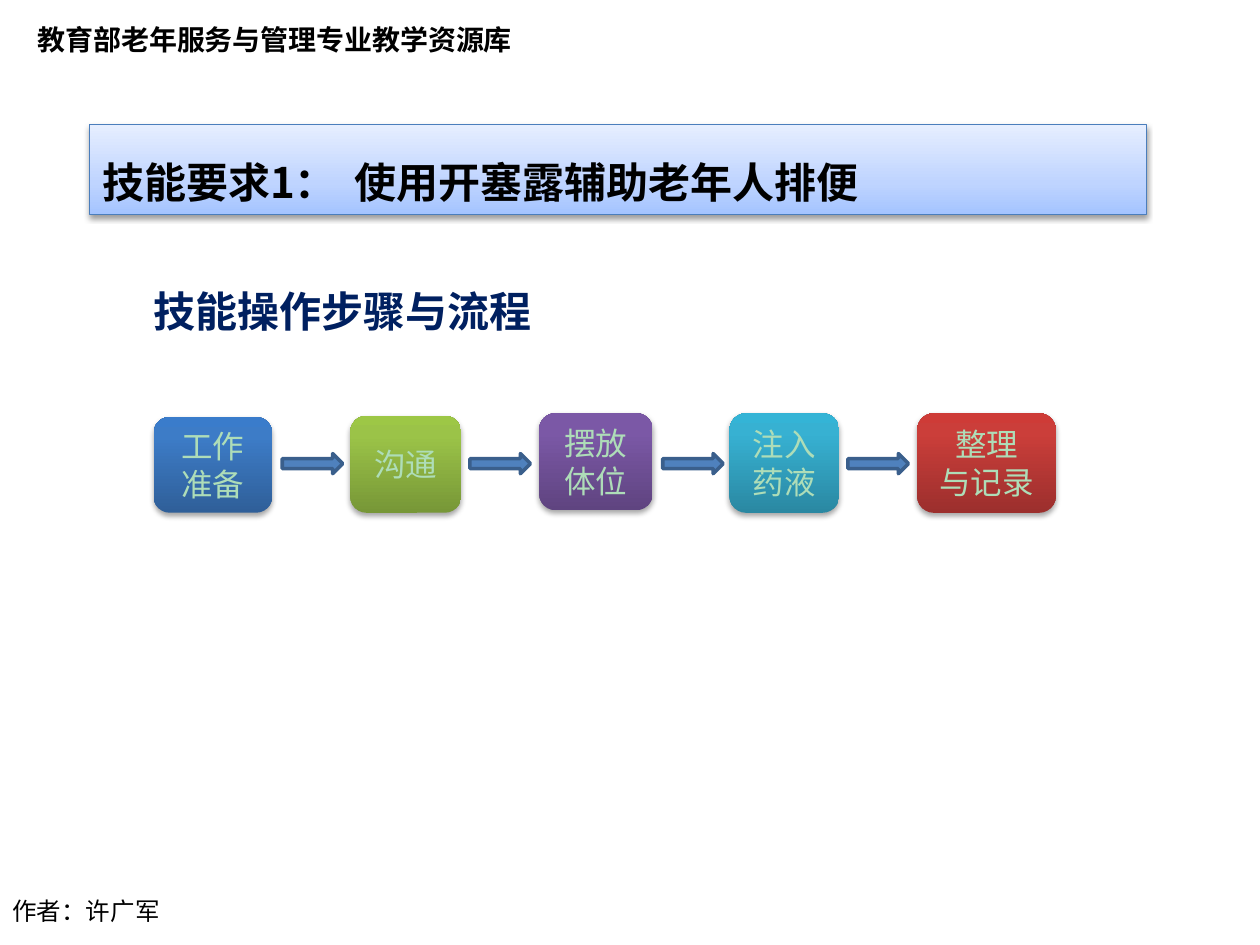
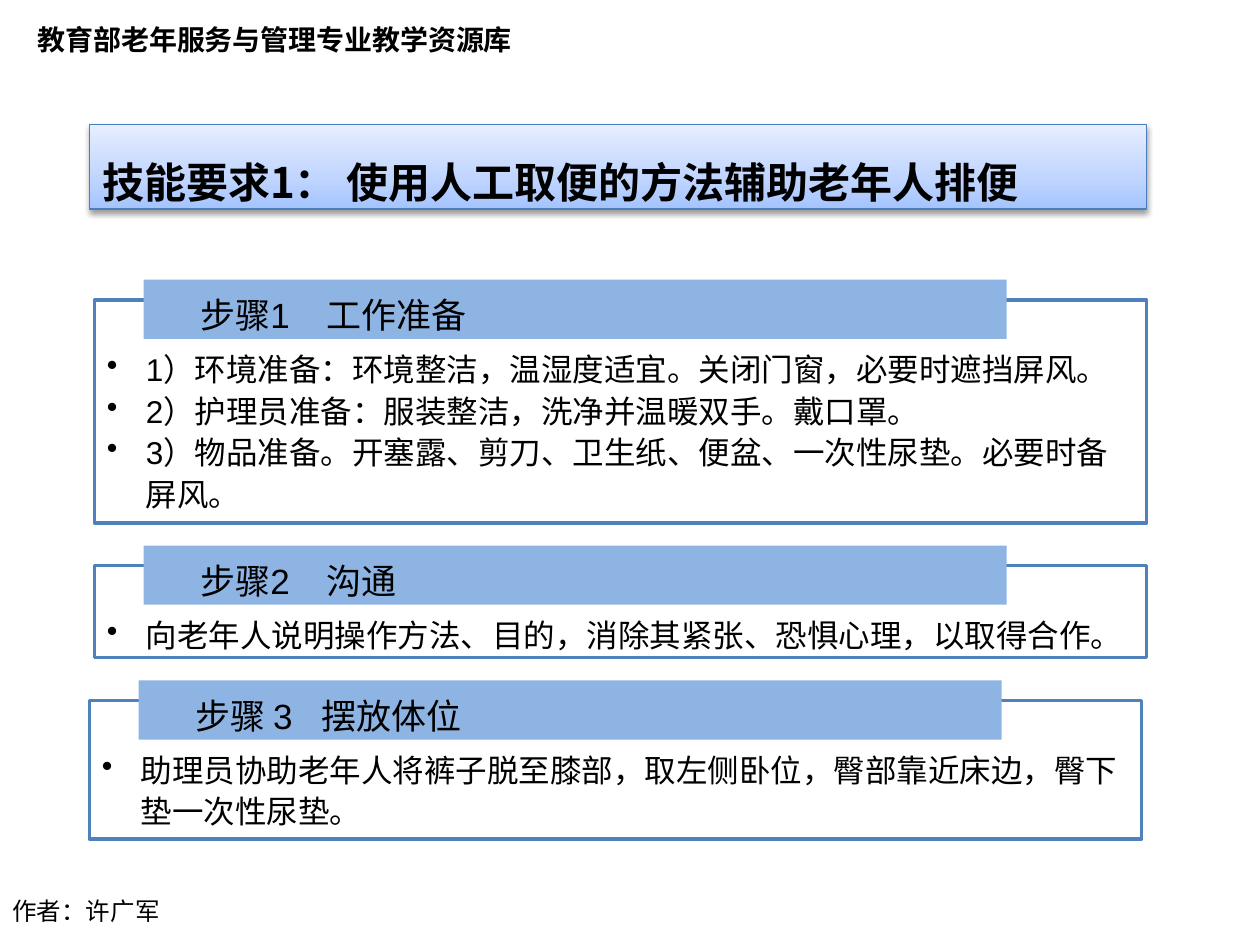
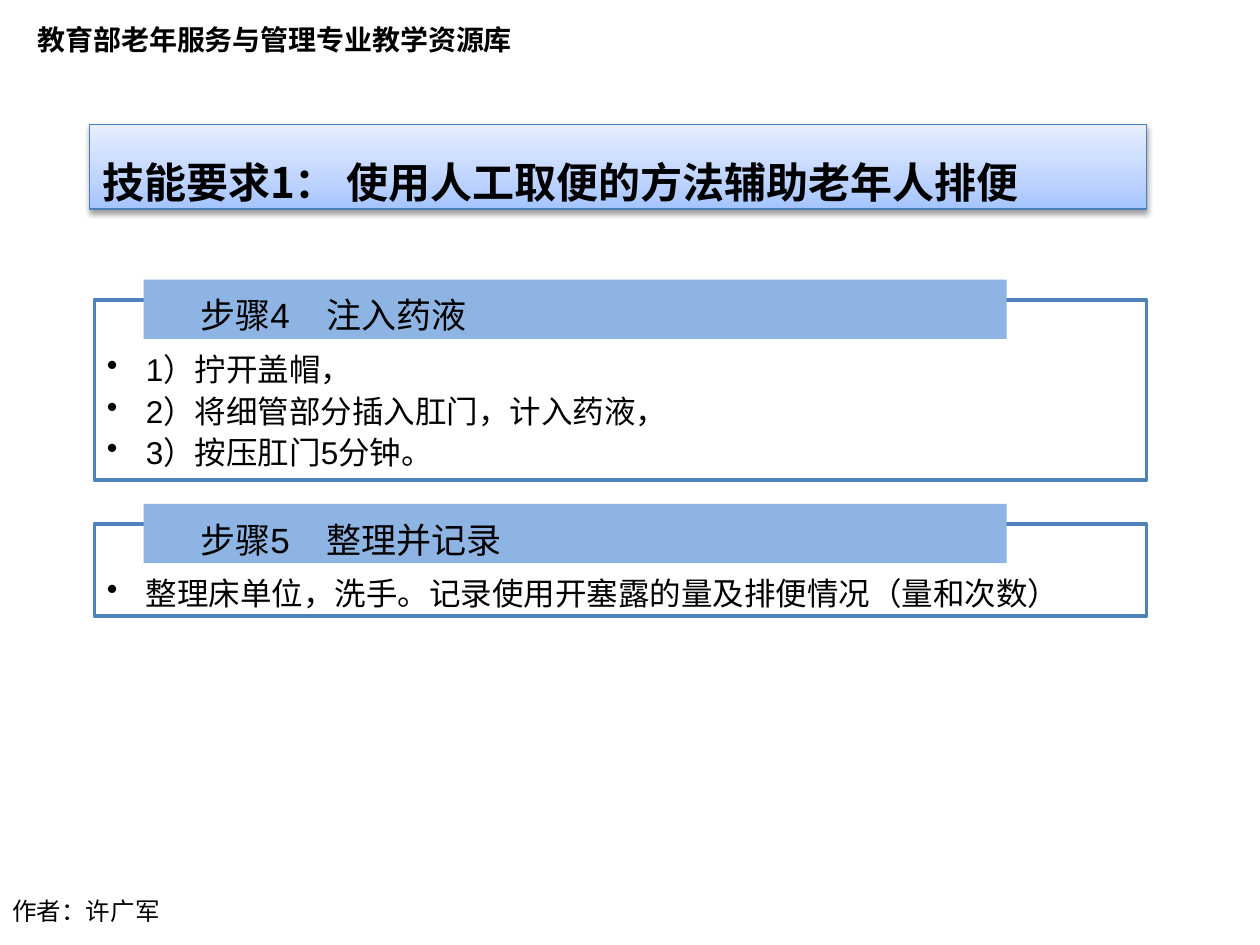
from copy import deepcopy

from pptx import Presentation
from pptx.dml.color import RGBColor
from pptx.enum.shapes import MSO_SHAPE
from pptx.enum.text import MSO_ANCHOR, MSO_AUTO_SIZE, PP_ALIGN
from pptx.oxml.ns import qn
from pptx.oxml.xmlchemy import OxmlElement
from pptx.util import Inches, Pt

RECTANGLE = MSO_SHAPE.RECTANGLE
ROUNDED = MSO_SHAPE.ROUNDED_RECTANGLE
ARROW = MSO_SHAPE.RIGHT_ARROW
TOP, MIDDLE = MSO_ANCHOR.TOP, MSO_ANCHOR.MIDDLE
LEFT, CENTER = PP_ALIGN.LEFT, PP_ALIGN.CENTER
FIXED = MSO_AUTO_SIZE.NONE

BLACK = RGBColor(0x00, 0x00, 0x00)
NAVY = RGBColor(0x00, 0x20, 0x60)
MINT = RGBColor(0xAE, 0xDD, 0xB8)
BLUE = RGBColor(0x4F, 0x81, 0xBD)
ARROW_EDGE = RGBColor(0x3A, 0x5F, 0x8C)
TITLE_EDGE = RGBColor(0x4B, 0x7E, 0xBC)
BAND_BLUE = RGBColor(0x8E, 0xB4, 0xE3)

TITLE_COLORS = (RGBColor(0xA4, 0xC4, 0xFF), RGBColor(0xBF, 0xD4, 0xFF), RGBColor(0xE6, 0xEE, 0xFF))
BLUES = (RGBColor(0x2F, 0x5F, 0x99), RGBColor(0x3D, 0x7C, 0xC7), RGBColor(0x3A, 0x7C, 0xCB))
GREENS = (RGBColor(0x77, 0x97, 0x37), RGBColor(0x9B, 0xC3, 0x48), RGBColor(0x9D, 0xC7, 0x46))
PURPLES = (RGBColor(0x5F, 0x44, 0x80), RGBColor(0x7B, 0x58, 0xA6), RGBColor(0x7C, 0x57, 0xA8))
TEALS = (RGBColor(0x2A, 0x88, 0xA2), RGBColor(0x37, 0xB1, 0xD2), RGBColor(0x34, 0xB4, 0xD6))
REDS = (RGBColor(0x9C, 0x2F, 0x2D), RGBColor(0xCB, 0x3E, 0x3A), RGBColor(0xCE, 0x3B, 0x37))

SANS = "Noto Sans CJK SC"
TITLE_FONT = "Noto Sans CJK JP"
LATIN = "Arial"
LABEL_FONT = "Calibri"

FLOW = [
    (1.22, 3.31, 0.94, 0.76, ["工作准备"], BLUES),
    (2.78, 3.30, 0.88, 0.77, ["沟通"], GREENS),
    (4.28, 3.28, 0.90, 0.77, ["摆放体位"], PURPLES),
    (5.79, 3.28, 0.87, 0.79, ["注入药液"], TEALS),
    (7.28, 3.28, 1.10, 0.79, ["整理", "与记录"], REDS),
]
ARROW_LEFTS = (2.24, 3.73, 5.26, 6.73)

MANUAL_TITLE = "技能要求1： 使用人工取便的方法辅助老年人排便"
STEP_PAGES = [
    [
        (0.75, 2.38, 1.77, "步骤1\t工作准备", 1.5, [
            "1）环境准备：环境整洁，温湿度适宜。关闭门窗，必要时遮挡屏风。",
            "2）护理员准备：服装整洁，洗净并温暖双手。戴口罩。",
            "3）物品准备。开塞露、剪刀、卫生纸、便盆、一次性尿垫。必要时备屏风。",
        ]),
        (0.75, 4.49, 0.73, "步骤2\t沟通", 1.5, [
            "向老年人说明操作方法、目的，消除其紧张、恐惧心理，以取得合作。",
        ]),
        (0.71, 5.56, 1.10, "步骤 3\t摆放体位", 1.63, [
            "助理员协助老年人将裤子脱至膝部，取左侧卧位，臀部靠近床边，臀下垫一次性尿垫。",
        ]),
    ],
    [
        (0.75, 2.38, 1.43, "步骤4\t注入药液", 1.5, [
            "1）拧开盖帽，",
            "2）将细管部分插入肛门，计入药液，",
            "3）按压肛门5分钟。",
        ]),
        (0.75, 4.16, 0.73, "步骤5\t整理并记录", 1.5, [
            "整理床单位，洗手。记录使用开塞露的量及排便情况（量和次数）",
        ]),
    ],
]


class Deck:
    def __init__(self):
        self.file = Presentation()
        self.file.slide_width = Inches(10)
        self.file.slide_height = Inches(7.5)
        self.page = None

    def add_page(self, title, title_height, tab=None):
        self.page = self.file.slides.add_slide(self.file.slide_layouts[5])
        self.text(0.2, 0.13, 4.02, 0.37, "教育部老年服务与管理专业教学资源库", SANS, 16, bold=True, wrap=False)
        self.text(0, 7.06, 5.36, 0.34, "作者：许广军", SANS, 14)
        box = self.page.shapes.title
        box.left, box.top = Inches(0.71), Inches(0.99)
        box.width, box.height = Inches(8.39), Inches(title_height)
        self.gradient(box, TITLE_COLORS, 35)
        box.line.color.rgb = TITLE_EDGE
        box.line.width = Pt(0.75)
        self.shadow(box, 20000, 38000)
        self.set_lines(box, [title], TITLE_FONT, 24, bold=True, spacing=1.5, tab=tab)

    def text(self, left, top, width, height, words, font, size, wrap=True, **style):
        box = self.page.shapes.add_textbox(Inches(left), Inches(top), Inches(width), Inches(height))
        self.set_lines(box, [words], font, size, **style)
        box.text_frame.word_wrap = wrap

    def shape(self, kind, left, top, width, height, fill=None, line=None):
        box = self.page.shapes.add_shape(kind, Inches(left), Inches(top), Inches(width), Inches(height))
        box.shadow.inherit = False
        if fill is None:
            box.fill.background()
        else:
            box.fill.solid()
            box.fill.fore_color.rgb = fill
        if line is None:
            box.line.fill.background()
        else:
            box.line.color.rgb = line
            box.line.width = Pt(2)
        return box

    def gradient(self, box, colors, middle):
        box.fill.gradient()
        box.fill.gradient_angle = 90
        stop_list = box._element.spPr.find(qn("a:gradFill")).find(qn("a:gsLst"))
        stop_list.append(deepcopy(stop_list[0]))
        for stop, color, percent in zip(box.fill.gradient_stops, colors, (0, middle, 100)):
            stop.color.rgb = color
            stop.position = percent / 100

    def shadow(self, box, distance, alpha):
        box.shadow.inherit = False
        outer = OxmlElement("a:outerShdw")
        for name, value in (("blurRad", 40000), ("dist", distance), ("dir", 5400000), ("rotWithShape", 0)):
            outer.set(name, str(value))
        color = OxmlElement("a:srgbClr")
        color.set("val", str(BLACK))
        opacity = OxmlElement("a:alpha")
        opacity.set("val", str(alpha))
        color.append(opacity)
        outer.append(color)
        box._element.spPr.find(qn("a:effectLst")).append(outer)

    def set_lines(self, box, lines, font, size, color=BLACK, bold=False, align=LEFT, anchor=TOP,
                  spacing=None, margin=0, indent=0, bullet=False, tab=None, top_inset=0.05):
        frame = box.text_frame
        frame.auto_size = FIXED
        frame.word_wrap = True
        frame.vertical_anchor = anchor
        frame.margin_left = frame.margin_right = Inches(0.1)
        frame.margin_top, frame.margin_bottom = Inches(top_inset), Inches(0.05)
        for number, line in enumerate(lines):
            para = frame.add_paragraph() if number else frame.paragraphs[0]
            para.add_run().text = line
            props = para._p.get_or_add_pPr()
            props.set("marL", str(Inches(margin)))
            props.set("indent", str(Inches(indent)))
            if bullet:
                mark = OxmlElement("a:buChar")
                mark.set("char", "•")
                props.append(mark)
            if tab:
                tabs, stop = OxmlElement("a:tabLst"), OxmlElement("a:tab")
                stop.set("pos", str(Inches(tab)))
                stop.set("algn", "l")
                tabs.append(stop)
                props.append(tabs)
            para.alignment = align
            if spacing:
                para.line_spacing = spacing
            para.font.size = Pt(size)
            para.font.bold = bold
            para.font.color.rgb = color
            para.font.name = font
            if font in (SANS, TITLE_FONT):
                east_asian = OxmlElement("a:ea")
                east_asian.set("typeface", font)
                props.find(qn("a:defRPr")).append(east_asian)

    def flow_box(self, left, top, width, height, lines, colors):
        box = self.shape(ROUNDED, left, top, width, height)
        self.gradient(box, colors, 80)
        self.shadow(box, 23000, 35000)
        self.set_lines(box, lines, LABEL_FONT, 18, MINT, align=CENTER, anchor=MIDDLE)

    def step(self, left, top, height, heading, tab, lines):
        frame = self.shape(RECTANGLE, left, top, 8.35, height, line=BLUE)
        self.set_lines(frame, lines, LATIN, 18, spacing=1.1, margin=0.31, indent=-0.31,
                       bullet=True, top_inset=0.37)
        self.shape(RECTANGLE, left + 0.39, top - 0.16, 6.85, 0.47, BAND_BLUE)
        self.text(left + 0.24, top - 0.13, 6.93, 0.43, heading, LATIN, 20,
                  spacing=1.1, indent=0.5, tab=tab)


def main():
    deck = Deck()
    deck.add_page("技能要求1：\t使用开塞露辅助老年人排便", 0.71, tab=2.25)
    deck.text(1.12, 2.22, 3.25, 0.5, "技能操作步骤与流程", LATIN, 24, color=NAVY, bold=True, wrap=False)
    for flow_step in FLOW:
        deck.flow_box(*flow_step)
    for left in ARROW_LEFTS:
        deck.shape(ARROW, left, 3.6, 0.48, 0.16, BLUE, ARROW_EDGE)

    for steps in STEP_PAGES:
        deck.add_page(MANUAL_TITLE, 0.67)
        for step in steps:
            deck.step(*step)

    deck.file.save("out.pptx")


if __name__ == "__main__":
    main()
